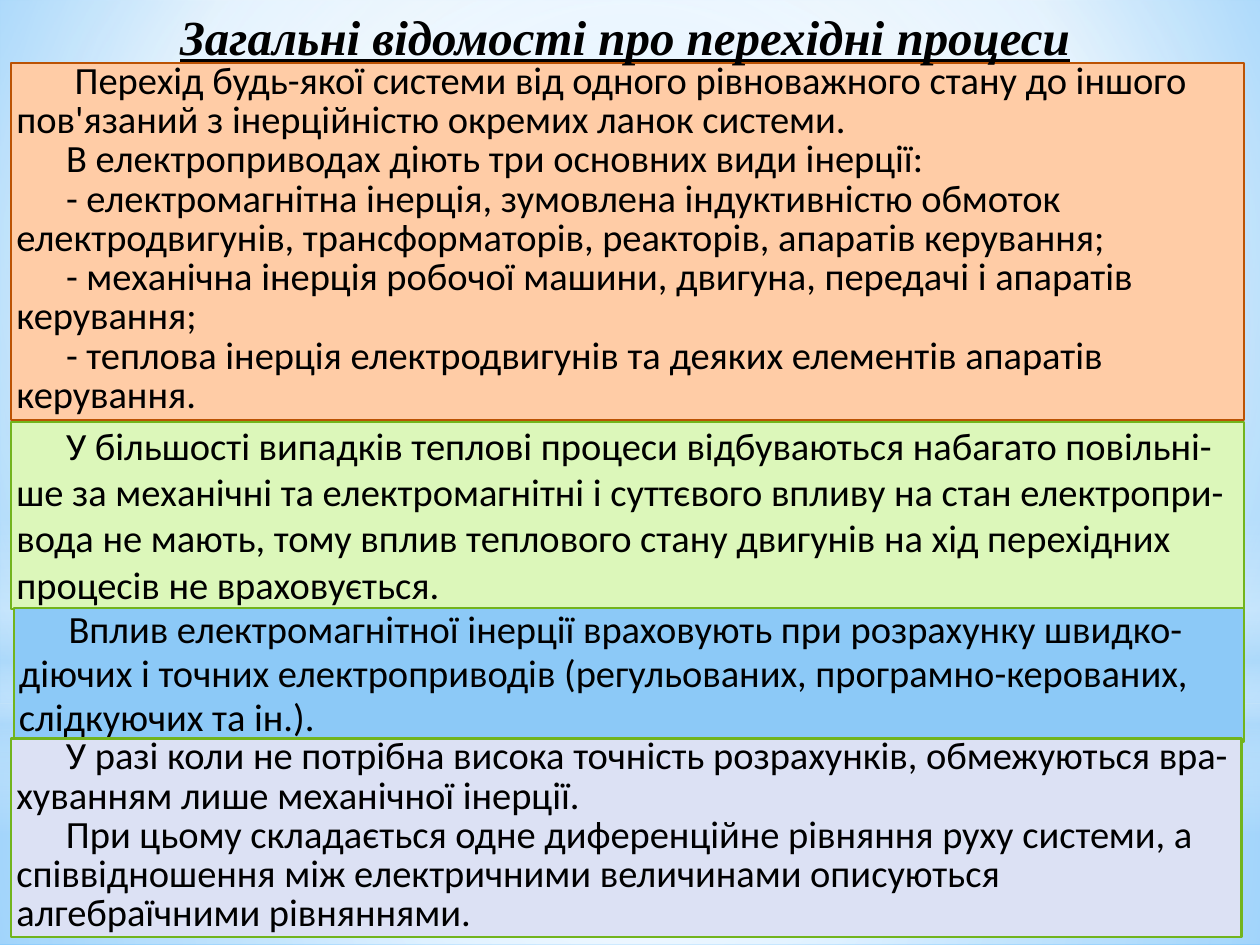
from lxml import etree
from pptx import Presentation
from pptx import util as u
from pptx.dml.color import RGBColor
from pptx.enum import shapes, text
from pptx.oxml.ns import qn

BLACK = RGBColor(0x00, 0x00, 0x00)
WHITE = RGBColor(0xFF, 0xFF, 0xFF)
PALE = RGBColor(0xB4, 0xDC, 0xFA)
SKY = RGBColor(0x9E, 0xD5, 0xFF)
AZURE = RGBColor(0x5B, 0xB9, 0xFF)
PEACH = RGBColor(0xFF, 0xCC, 0xA6)
RUST = RGBColor(0xBB, 0x52, 0x03)
LIME = RGBColor(0xDC, 0xF7, 0xBA)
GREEN = RGBColor(0x72, 0xB4, 0x1D)
BLUE = RGBColor(0x8C, 0xC9, 0xF7)
LILAC = RGBColor(0xDC, 0xE1, 0xF4)

RECT = shapes.MSO_SHAPE.RECTANGLE
OVAL = shapes.MSO_SHAPE.OVAL
CENTER = (50, 50, 50, 50)

GLOWS = [
    (RECT, (0, 402, 720, 138), CENTER,
     [(0, WHITE, 91), (37, WHITE, 76), (100, PALE, 79)]),
    (RECT, (0, 0, 720, 402), CENTER,
     [(0, WHITE, 89), (48, WHITE, 62), (100, PALE, 79)]),
    (RECT, (0, 296.5, 720, 180), None,
     [(0, WHITE, 0), (29, WHITE, 30), (45, PALE, 40),
      (55, WHITE, 26), (65, PALE, 60), (100, WHITE, 0)]),
    (OVAL, (0, 126, 720, 402), CENTER, [(0, WHITE, 100), (56, WHITE, 0)]),
]

PANELS = [
    ((6.5, 36, 704.2, 204.2), PEACH, RUST, 0.85, [
        " Перехід будь-якої системи від одного рівноважного стану до іншого "
        "пов'язаний з інерційністю окремих ланок системи.",
        "В електроприводах діють три основних види інерції:",
        "- електромагнітна інерція, зумовлена індуктивністю обмоток "
        "електродвигунів, трансформаторів, реакторів, апаратів керування;",
        "- механічна інерція робочої машини, двигуна, передачі і апаратів керування;",
        "- теплова інерція електродвигунів та деяких елементів апаратів керування.",
    ]),
    ((6.5, 241.2, 704.6, 106.6), LIME, GREEN, 1, [
        "У більшості випадків теплові процеси відбуваються набагато повільні-ше "
        "за механічні та електромагнітні і суттєвого впливу на стан "
        "електропри-вода не мають, тому вплив теплового стану двигунів на хід "
        "перехідних процесів не враховується.",
    ]),
    ((8, 347.6, 703, 76.2), BLUE, GREEN, 0.95, [
        "Вплив електромагнітної інерції враховують при розрахунку "
        "швидко-діючих і точних електроприводів (регульованих, "
        "програмно-керованих, слідкуючих та ін.).",
    ]),
    ((6.5, 422, 703, 113.6), LILAC, GREEN, 0.85, [
        "У разі коли не потрібна висока точність розрахунків, обмежуються "
        "вра-хуванням лише механічної інерції.",
        "При цьому складається одне диференційне рівняння руху системи, а "
        "співвідношення між електричними величинами описуються "
        "алгебраїчними рівняннями.",
    ]),
]


def points(box):
    """Turn a box of numbers into lengths."""
    return [u.Pt(n) for n in box]


def blend(fill, root, stops, focus):
    """Give a fill a gradient, round when it has a focus, else downward."""
    fill.gradient()
    grad = next(root.iter(qn("a:gradFill")))
    for child in list(grad):
        grad.remove(child)
    row = etree.SubElement(grad, qn("a:gsLst"))
    for place, color, alpha in stops:
        stop = etree.SubElement(row, qn("a:gs"), pos=str(place * 1000))
        tint = etree.SubElement(stop, qn("a:srgbClr"), val=str(color))
        if alpha < 100:
            etree.SubElement(tint, qn("a:alpha"), val=str(alpha * 1000))
    if focus:
        way = etree.SubElement(grad, qn("a:path"), path="circle")
        sides = {k: str(n * 1000) for k, n in zip("ltrb", focus)}
        etree.SubElement(way, qn("a:fillToRect"), **sides)
    else:
        etree.SubElement(grad, qn("a:lin"), ang="5400000", scaled="0")


def add_glow(slide, kind, box, focus, stops):
    """Draw one soft light of the backdrop."""
    shape = slide.shapes.add_shape(kind, *points(box))
    shape.shadow.inherit = False
    shape.line.fill.background()
    blend(shape.fill, shape.element, stops, focus)


def set_frame(frame, side, edge):
    """Set wrapping, growth and margins of a text frame."""
    frame.word_wrap = True
    frame.auto_size = text.MSO_AUTO_SIZE.SHAPE_TO_FIT_TEXT
    frame.vertical_anchor = text.MSO_ANCHOR.TOP
    frame.margin_left = frame.margin_right = u.Pt(side)
    frame.margin_top = frame.margin_bottom = u.Pt(edge)


def add_run(para, words, face, size):
    """Add a black run and return its font."""
    run = para.add_run()
    run.text = words
    font = run.font
    font.name, font.size = face, u.Pt(size)
    font.color.rgb = BLACK
    return font


def add_panel(slide, box, fill, edge, pitch, paras):
    """Draw a framed panel of indented paragraphs."""
    shape = slide.shapes.add_shape(RECT, *points(box))
    shape.shadow.inherit = False
    shape.fill.solid()
    shape.fill.fore_color.rgb = fill
    shape.line.color.rgb = edge
    shape.line.width = u.Pt(1.25)
    frame = shape.text_frame
    set_frame(frame, 2.9, 0)
    for i, words in enumerate(paras):
        para = frame.add_paragraph() if i else frame.paragraphs[0]
        para.alignment = text.PP_ALIGN.LEFT
        para.line_spacing = pitch
        props = para._p.get_or_add_pPr()
        props.set("marL", "0")
        props.set("indent", str(u.Pt(28.35)))
        add_run(para, words, "Calibri", 22)


def add_title(slide, words, box):
    """Write the centred heading."""
    frame = slide.shapes.add_textbox(*points(box)).text_frame
    set_frame(frame, 0, 3.6)
    para = frame.paragraphs[0]
    para.alignment = text.PP_ALIGN.CENTER
    font = add_run(para, words, "Times New Roman", 28)
    font.bold = font.italic = font.underline = True


def main():
    """Build and save the slide."""
    deck = Presentation()
    deck.slide_width, deck.slide_height = u.Pt(720), u.Pt(540)
    slide = deck.slides.add_slide(deck.slide_layouts[6])
    blend(slide.background.fill, slide.element,
          [(0, SKY, 100), (60, WHITE, 100), (100, AZURE, 100)],
          (20, 10, 20, 60))
    for glow in GLOWS:
        add_glow(slide, *glow)
    for panel in PANELS:
        add_panel(slide, *panel)
    add_title(slide, "Загальні відомості про перехідні процеси",
              (5.8, 0, 702.7, 41))
    deck.save("out.pptx")


if __name__ == "__main__":
    main()
